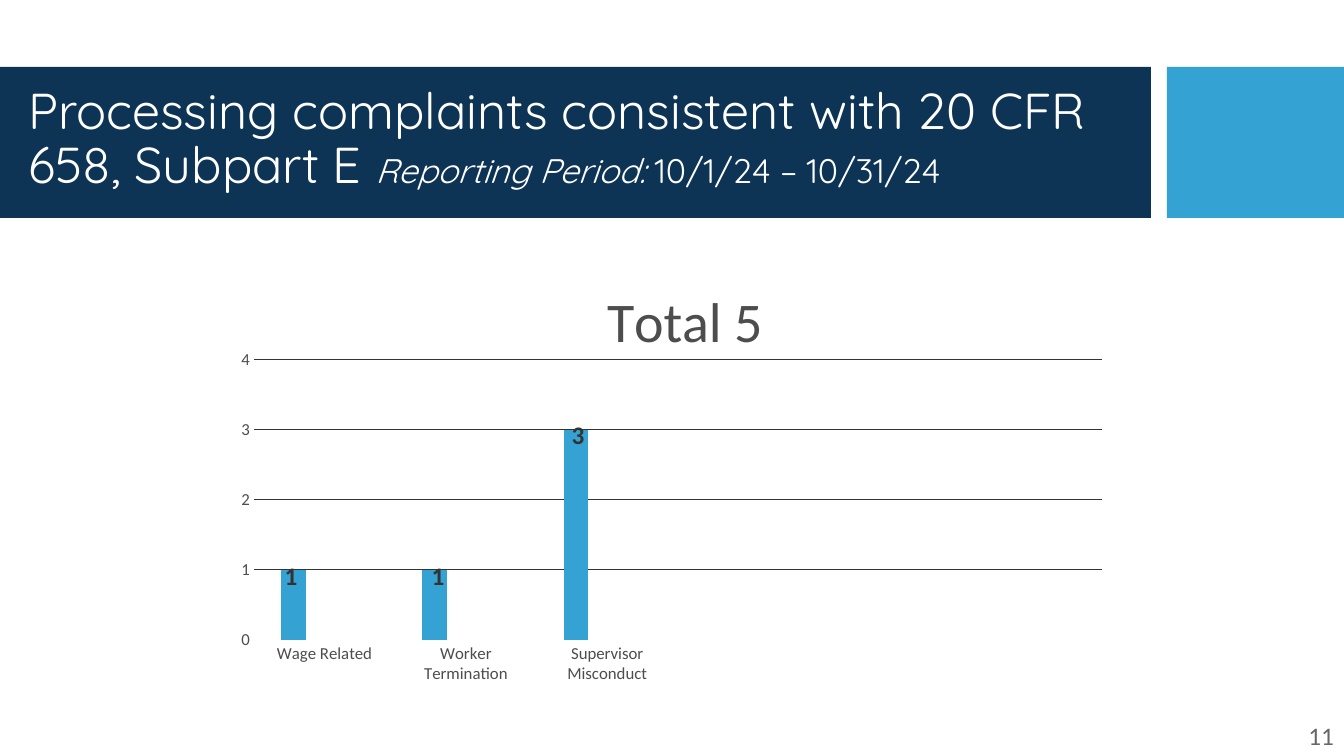
from lxml.etree import SubElement
from pptx import Presentation
from pptx.chart.data import CategoryChartData
from pptx.dml.color import RGBColor
from pptx.enum.chart import XL_CHART_TYPE, XL_TICK_MARK
from pptx.enum.shapes import MSO_SHAPE
from pptx.enum.text import MSO_ANCHOR, PP_ALIGN
from pptx.oxml import parse_xml
from pptx.oxml.ns import nsdecls, qn
from pptx.util import Pt

PX = 914400 / 100.8
COLORS = {"navy": "0D3455", "blue": "34A2D2", "rust": "A24600", "white": "FFFFFF",
          "ink": "333333", "axis": "4D4D4D", "number": "666666"}
BANDS = [((0, 67, 1151, 151), "navy"), ((1167, 67, 177, 151), "blue")]
TITLE_BOX = (18, 67, 1132, 147)
TITLE_RUNS = [("Processing complaints consistent with 20 CFR 658, Subpart E ", 36, False),
              ("Reporting Period: ", 24.3, True),
              ("10/1/24 – 10/31/24", 24.3, False)]
NUMBER_BOX = (1272, 715, 72, 41)
CHART_BOX = (224, 250, 896, 442)
PLOT_BOX = (254, 360, 848, 280)
CHART_TITLE, CHART_TITLE_SPOT = "Total 5", (597, 273)
CATEGORIES = ["Wage Related", "Worker Termination", "Supervisor Misconduct", "", "", ""]
SERIES = [("Series 1", [1, 1, 3, None, None, None], "blue"),
          ("Series 2", [None] * 6, "navy"),
          ("Series 3", [None] * 6, "rust")]
# text, centre x, top y
BAR_LABELS = [("3", 578, 414), ("1", 438, 555), ("1", 291, 555)]
LABEL_WIDTH, LABEL_HEIGHT = 18, 41


def emu(*lengths):
    return [round(length * PX) for length in lengths]


def rgb(name):
    return RGBColor.from_string(COLORS[name])


def style(font, size, color, face="Calibri", bold=False, italic=False):
    font.size, font.name, font.bold, font.italic = Pt(size), face, bold, italic
    font.color.rgb = rgb(color)


def add_text(slide, place, side_inset=10, wrap=True, align=PP_ALIGN.LEFT):
    """Add an empty text box, centred vertically, and return its paragraph."""
    frame = slide.shapes.add_textbox(*emu(*place)).text_frame
    frame.word_wrap = wrap
    frame.vertical_anchor = MSO_ANCHOR.MIDDLE
    frame.margin_left = frame.margin_right = emu(side_inset)[0]
    para = frame.paragraphs[0]
    para.alignment = align
    return para


def add_run(para, text, *args, **kwargs):
    span = para.add_run()
    span.text = text
    style(span.font, *args, **kwargs)


def set_layout(parent, after, **values):
    """Place a chart part by fractions of the chart area."""
    for old in parent.findall(qn("c:layout")):
        parent.remove(old)
    layout = parse_xml(f"<c:layout {nsdecls('c')}><c:manualLayout/></c:layout>")
    for tag, value in values.items():
        SubElement(layout[0], qn(f"c:{tag}")).set("val", str(value))
    if after is None:
        parent.insert(0, layout)
    else:
        after.addnext(layout)


def add_bar_chart(slide):
    data = CategoryChartData()
    data.categories = CATEGORIES
    for name, values, _ in SERIES:
        data.add_series(name, values)
    chart = slide.shapes.add_chart(XL_CHART_TYPE.COLUMN_CLUSTERED, *emu(*CHART_BOX), data).chart
    style(chart.font, 10, "axis")
    chart.has_legend = False
    chart.has_title = True
    add_run(chart.chart_title.text_frame.paragraphs[0], CHART_TITLE, 40, "axis")
    chart.chart_title.include_in_layout = False

    left, top, width, height = CHART_BOX
    plot_left, plot_top, plot_width, plot_height = PLOT_BOX
    title_left, title_top = CHART_TITLE_SPOT
    title = chart.chart_title._element
    set_layout(title, title.find(qn("c:tx")), xMode="edge", yMode="edge",
               x=round((title_left - left) / width, 4), y=round((title_top - top) / height, 4))
    set_layout(chart._chartSpace.chart.plotArea, None,
               layoutTarget="inner", xMode="edge", yMode="edge",
               x=round((plot_left - left) / width, 4), y=round((plot_top - top) / height, 4),
               w=round(plot_width / width, 4), h=round(plot_height / height, 4))

    plot = chart.plots[0]
    plot.gap_width, plot.overlap, plot.vary_by_categories = 219, -27, False
    for series, (_, _, color) in zip(plot.series, SERIES):
        series.format.fill.solid()
        series.format.fill.fore_color.rgb = rgb(color)
    for axis in (chart.category_axis, chart.value_axis):
        axis.major_tick_mark = axis.minor_tick_mark = XL_TICK_MARK.NONE
        style(axis.tick_labels.font, 12, "axis")
    category_line = chart.category_axis.format.line
    category_line.color.rgb, category_line.width = rgb("white"), Pt(0.75)
    values = chart.value_axis
    values.minimum_scale, values.maximum_scale, values.major_unit = 0, 4, 1
    values.format.line.fill.background()
    values.has_major_gridlines = True
    grid = values.major_gridlines.format.line
    grid.color.rgb, grid.width = rgb("ink"), Pt(0.75)


def main():
    deck = Presentation()
    deck.slide_width, deck.slide_height = emu(1344, 756)
    slide = deck.slides.add_slide(deck.slide_layouts[6])

    for place, color in BANDS:
        band = slide.shapes.add_shape(MSO_SHAPE.RECTANGLE, *emu(*place))
        band.shadow.inherit = False
        band.fill.solid()
        band.fill.fore_color.rgb = rgb(color)
        band.line.fill.background()

    add_run(add_text(slide, NUMBER_BOX, align=PP_ALIGN.RIGHT), "11", 18, "number")

    heading = add_text(slide, TITLE_BOX)
    heading.line_spacing = 0.9
    for text, size, italic in TITLE_RUNS:
        add_run(heading, text, size, "white", face="Quicksand", italic=italic)

    add_bar_chart(slide)

    for text, center, top in BAR_LABELS:
        place = (center - LABEL_WIDTH / 2, top, LABEL_WIDTH, LABEL_HEIGHT)
        label = add_text(slide, place, side_inset=0, wrap=False, align=PP_ALIGN.CENTER)
        add_run(label, text, 18, "ink", bold=True)

    deck.save("out.pptx")


if __name__ == "__main__":
    main()
